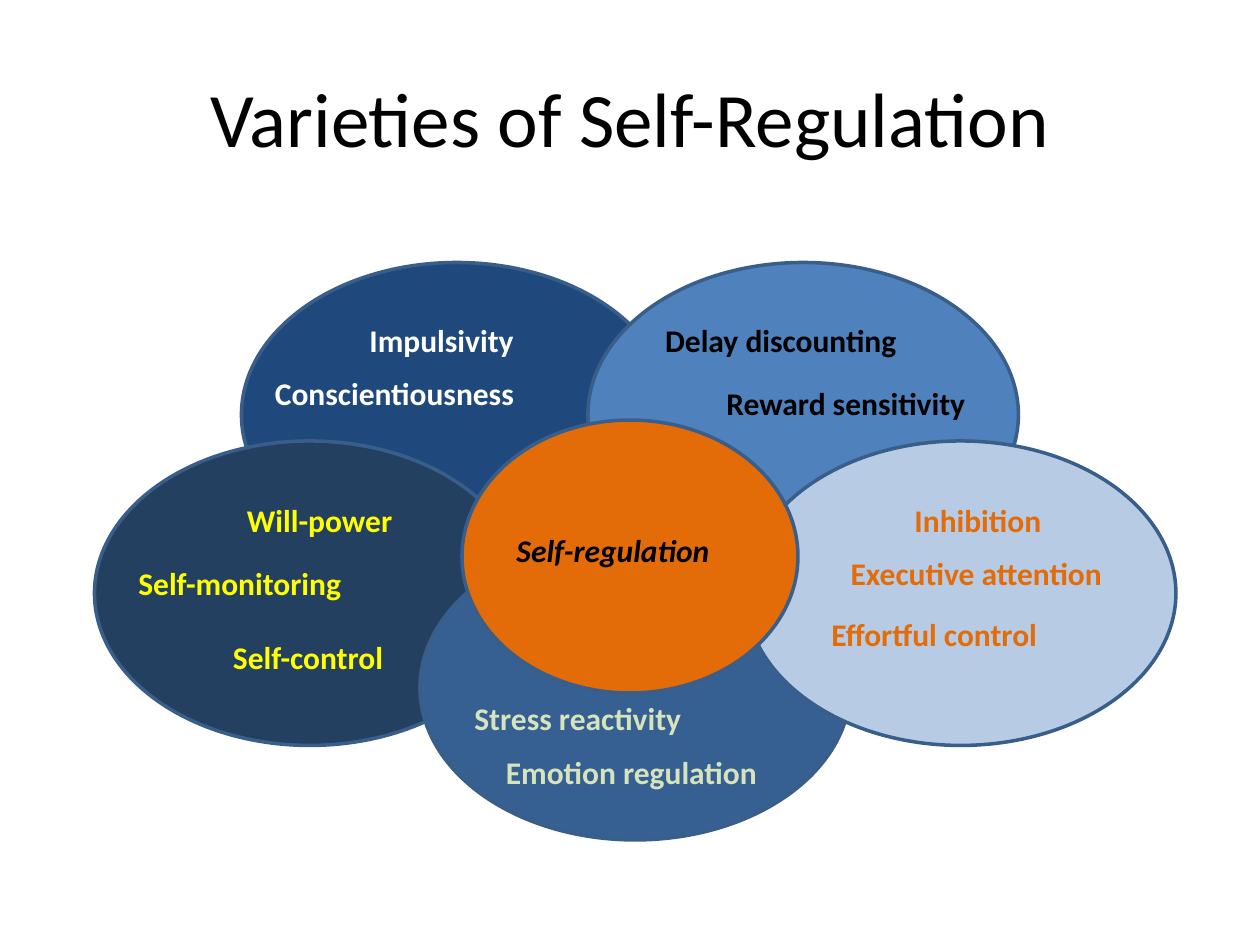
from dataclasses import dataclass

from pptx import Presentation
from pptx import util as u
from pptx.dml.color import RGBColor
from pptx.enum import shapes, text


@dataclass(frozen=True)
class Theme:
    font: str = "Calibri"
    title_size: int = 44
    label_size: int = 18
    black: str = "000000"
    white: str = "FFFFFF"
    yellow: str = "FFFF00"
    pale_green: str = "D6E3BC"
    orange: str = "E36C09"
    navy: str = "1F497D"
    dark_navy: str = "244061"
    steel: str = "366092"
    blue: str = "4F81BD"
    pale_blue: str = "B7CCE4"
    outline: str = "395E8A"
    outline_width: int = 2


@dataclass(frozen=True)
class Label:
    words: str
    left: float
    top: float
    width: float
    height: float = 29


@dataclass(frozen=True)
class Petal:
    left: float
    top: float
    fill: str
    ink: str
    labels: tuple[Label, ...]
    width: float = 246
    height: float = 174
    italic: bool = False


THEME = Theme()

# Ovals from back to front, each with its terms
PETALS = (
    Petal(138, 150, THEME.navy, THEME.white, (
        Label("Impulsivity", 204, 180, 120),
        Label("Conscientiousness", 150, 210, 192))),
    Petal(54, 252, THEME.dark_navy, THEME.yellow, (
        Label("Self-control", 126, 361, 115),
        Label("Self-monitoring", 72, 319, 149),
        Label("Will-power", 134, 283, 107))),
    Petal(240, 306, THEME.steel, THEME.pale_green, (
        Label("Emotion regulation", 282, 427, 180),
        Label("Stress reactivity", 264, 396, 172, 30))),
    Petal(336, 150, THEME.blue, THEME.black, (
        Label("Delay discounting", 373, 180, 185),
        Label("Reward sensitivity", 408, 216, 185))),
    Petal(426, 252, THEME.pale_blue, THEME.orange, (
        Label("Executive attention", 479, 313, 181),
        Label("Inhibition", 515.5, 283, 96.5),
        Label("Effortful control", 468, 348, 152))),
    Petal(264, 240, THEME.orange, THEME.black, (
        Label("Self-regulation", 288, 300, 142),),
        width=192, height=156, italic=True),
)


def add_text(parent, label: Label, size: int, ink: str, bold: bool = False,
             italic: bool = False, align=text.PP_ALIGN.LEFT,
             anchor=text.MSO_ANCHOR.TOP) -> None:
    box = parent.add_textbox(u.Pt(label.left), u.Pt(label.top),
                             u.Pt(label.width), u.Pt(label.height))
    frame = box.text_frame
    frame.word_wrap = True
    frame.vertical_anchor = anchor
    para = frame.paragraphs[0]
    para.text = label.words
    para.alignment = align
    font = para.font
    font.name, font.size = THEME.font, u.Pt(size)
    font.bold, font.italic = bold, italic
    font.color.rgb = RGBColor.from_string(ink)


def add_petal(parent, petal: Petal) -> None:
    oval = parent.add_shape(shapes.MSO_SHAPE.OVAL, u.Pt(petal.left), u.Pt(petal.top),
                            u.Pt(petal.width), u.Pt(petal.height))
    oval.shadow.inherit = False
    oval.fill.solid()
    oval.fill.fore_color.rgb = RGBColor.from_string(petal.fill)
    oval.line.color.rgb = RGBColor.from_string(THEME.outline)
    oval.line.width = u.Pt(THEME.outline_width)
    for label in petal.labels:
        add_text(parent, label, THEME.label_size, petal.ink, bold=True, italic=petal.italic)


def main() -> None:
    deck = Presentation()
    deck.slide_width, deck.slide_height = u.Pt(720), u.Pt(540)
    page = deck.slides.add_slide(deck.slide_layouts[6])

    # Title
    add_text(page.shapes, Label("Varieties of Self-Regulation", 36, 21.6, 648, 90),
             THEME.title_size, THEME.black, align=text.PP_ALIGN.CENTER,
             anchor=text.MSO_ANCHOR.MIDDLE)

    # Overlapping ovals, kept together as one group
    diagram = page.shapes.add_group_shape()
    for petal in PETALS:
        add_petal(diagram.shapes, petal)

    deck.save("out.pptx")


if __name__ == "__main__":
    main()
